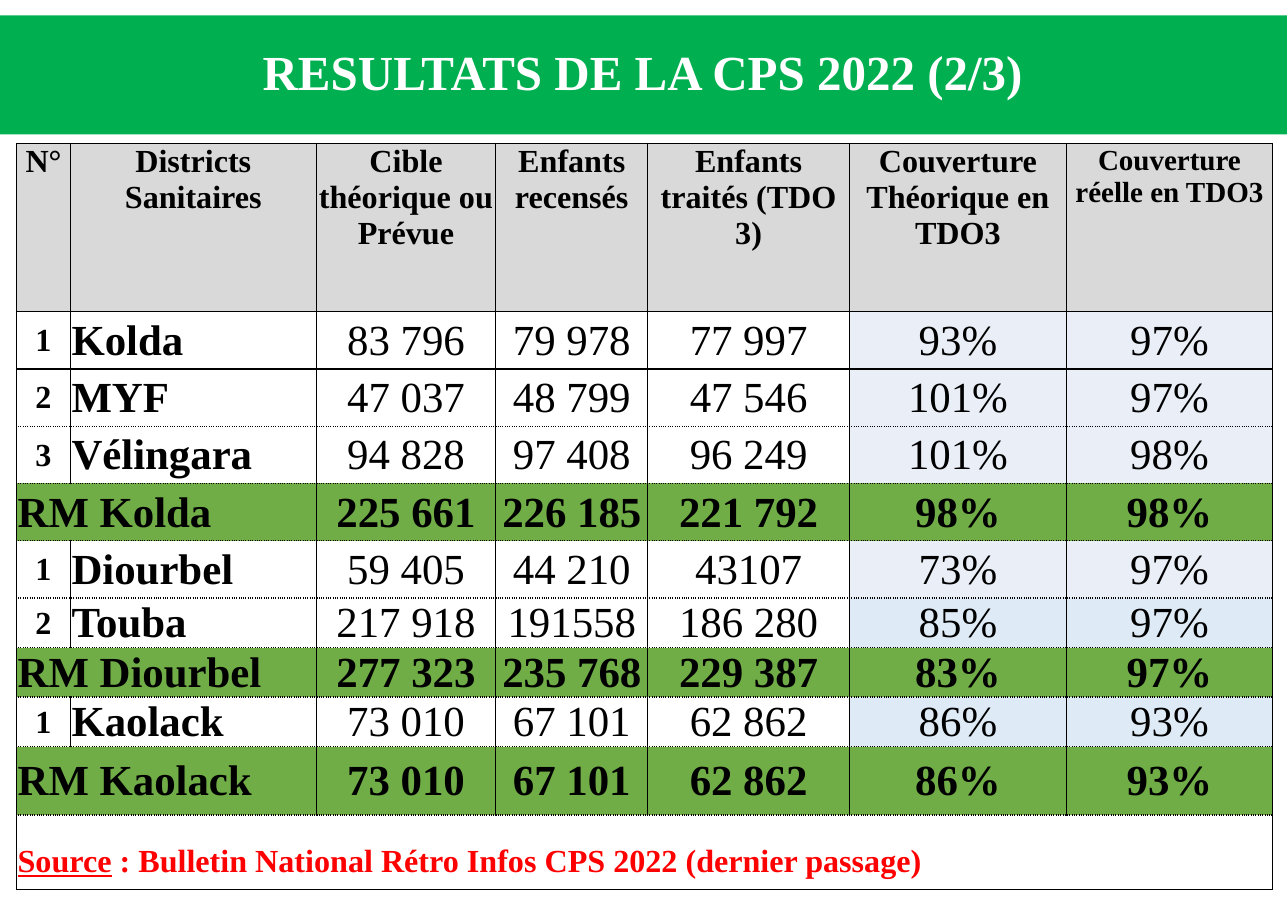
import pptx
import pptx.dml.color
import pptx.enum.text
import pptx.oxml
import pptx.oxml.ns
import pptx.util
from pptx.util import Inches

ALIGN = pptx.enum.text.PP_ALIGN
ANCHOR = pptx.enum.text.MSO_ANCHOR
BLACK, WHITE, RED = "000000", "FFFFFF", "FF0000"
GRAY, GREEN, BANNER = "D9D9D9", "70AD47", "00B050"
PALE, BLUE = "EAEFF7", "DEEBF7"

WIDTHS = [0.49, 2.23, 1.63, 1.38, 1.83, 1.97, 1.87]
HEIGHTS = [1.53] + [0.52] * 5 + [0.45] * 3 + [0.62, 0.68]
HEADS = ["N°", "Districts Sanitaires", "Cible théorique ou Prévue",
         "Enfants recensés", "Enfants traités (TDO 3)",
         "Couverture Théorique en TDO3", "Couverture réelle en TDO3"]
# Number (empty for a regional total), name, five values, tint of the rates
ROWS = [
    ("1", "Kolda", "83 796", "79 978", "77 997", "93%", "97%", PALE),
    ("2", "MYF", "47 037", "48 799", "47 546", "101%", "97%", PALE),
    ("3", "Vélingara", "94 828", "97 408", "96 249", "101%", "98%", PALE),
    ("", "RM Kolda", "225 661", "226 185", "221 792", "98%", "98%", GREEN),
    ("1", "Diourbel", "59 405", "44 210", "43107", "73%", "97%", PALE),
    ("2", "Touba", "217 918", "191558", "186 280", "85%", "97%", BLUE),
    ("", "RM Diourbel", "277 323", "235 768", "229 387", "83%", "97%", GREEN),
    ("1", "Kaolack", "73 010", "67 101", "62 862", "86%", "93%", BLUE),
    ("", "RM Kaolack", "73 010", "67 101", "62 862", "86%", "93%", GREEN),
]


def color(code):
    return pptx.dml.color.RGBColor.from_string(code)


def style(para, size, ink=BLACK, bold=True, align=ALIGN.CENTER):
    para.alignment = align
    font = para.font
    font.name, font.size, font.bold = "Times New Roman", pptx.util.Pt(size), bold
    font.color.rgb = color(ink)


def paint(shape, code):
    shape.fill.solid()
    shape.fill.fore_color.rgb = color(code)


def border(cell, top, bottom):
    """Draw black cell edges; top and bottom name their dash style."""
    props = cell._tc.get_or_add_tcPr()
    edges = [("L", "solid"), ("R", "solid"), ("T", top), ("B", bottom)]
    for index, (side, dash) in enumerate(edges):
        props.insert(index, pptx.oxml.parse_xml(
            f'<a:ln{side} {pptx.oxml.ns.nsdecls("a")} w="12700">'
            f'<a:solidFill><a:srgbClr val="{BLACK}"/></a:solidFill>'
            f'<a:prstDash val="{dash}"/></a:ln{side}>'))


def fill_cell(cell, text, size, tint=WHITE, **look):
    cell.margin_left = cell.margin_right = cell.margin_top = Inches(0.01)
    cell.margin_bottom = 0
    cell.vertical_anchor = ANCHOR.MIDDLE
    paint(cell, tint)
    para = cell.text_frame.paragraphs[0]
    para.add_run().text = text
    style(para, size, **look)
    return para


def fill_row(grid, row, entry):
    num, name, *values, tint = entry
    total = not num
    if total:
        grid.cell(row, 0).merge(grid.cell(row, 1))
    else:
        fill_cell(grid.cell(row, 0), num, 21)
    fill_cell(grid.cell(row, 0 if total else 1), name, 28,
              GREEN if total else WHITE, align=ALIGN.LEFT)
    for col, value in enumerate(values, 2):
        shade = tint if total or col > 4 else WHITE
        fill_cell(grid.cell(row, col), value, 28, shade, bold=total)


def fill_source(grid, row):
    cell = grid.cell(row, 0)
    cell.merge(grid.cell(row, len(WIDTHS) - 1))
    para = fill_cell(cell, "Source", 21, ink=RED, align=ALIGN.JUSTIFY)
    para.runs[0].font.underline = True
    para.add_run().text = " : Bulletin National Rétro Infos CPS 2022 (dernier passage)"
    para.line_spacing = 1.5
    para.space_before = pptx.util.Pt(10)


def add_title(slide, left, top, width, height):
    title = slide.shapes.title
    title.left, title.top = Inches(left), Inches(top)
    title.width, title.height = Inches(width), Inches(height)
    paint(title, BANNER)
    frame = title.text_frame
    frame.text = "RESULTATS DE LA CPS 2022 (2/3)"
    frame.vertical_anchor = ANCHOR.MIDDLE
    frame.auto_size = pptx.enum.text.MSO_AUTO_SIZE.NONE
    style(frame.paragraphs[0], 32, WHITE)
    frame.paragraphs[0].line_spacing = 0.9


def add_results(slide, left, top, width, height):
    grid = slide.shapes.add_table(
        len(HEIGHTS), len(WIDTHS), Inches(left), Inches(top),
        Inches(width), Inches(height)).table
    grid.first_row = grid.horz_banding = False
    for column, size in zip(grid.columns, WIDTHS):
        column.width = Inches(size)
    for row, size in zip(grid.rows, HEIGHTS):
        row.height = Inches(size)

    last = len(HEIGHTS) - 1
    for col, head in enumerate(HEADS):
        cell = grid.cell(0, col)
        fill_cell(cell, head, 19 if col == len(HEADS) - 1 else 21, GRAY)
        cell.vertical_anchor = ANCHOR.TOP
    for row, entry in enumerate(ROWS, 1):
        fill_row(grid, row, entry)
    fill_source(grid, last)

    for row in range(last + 1):
        top_dash = "solid" if row < 3 else "sysDot"
        low_dash = "solid" if row < 2 or row == last else "sysDot"
        for col in range(len(WIDTHS)):
            border(grid.cell(row, col), top_dash, low_dash)


def main():
    deck = pptx.Presentation()
    deck.slide_width, deck.slide_height = Inches(11.69), Inches(8.27)
    slide = deck.slides.add_slide(deck.slide_layouts[5])
    add_title(slide, -0.01, 0.14, 11.69, 1.08)
    add_results(slide, 0.15, 1.3, 11.4, 6.83)
    deck.save("out.pptx")


if __name__ == "__main__":
    main()
